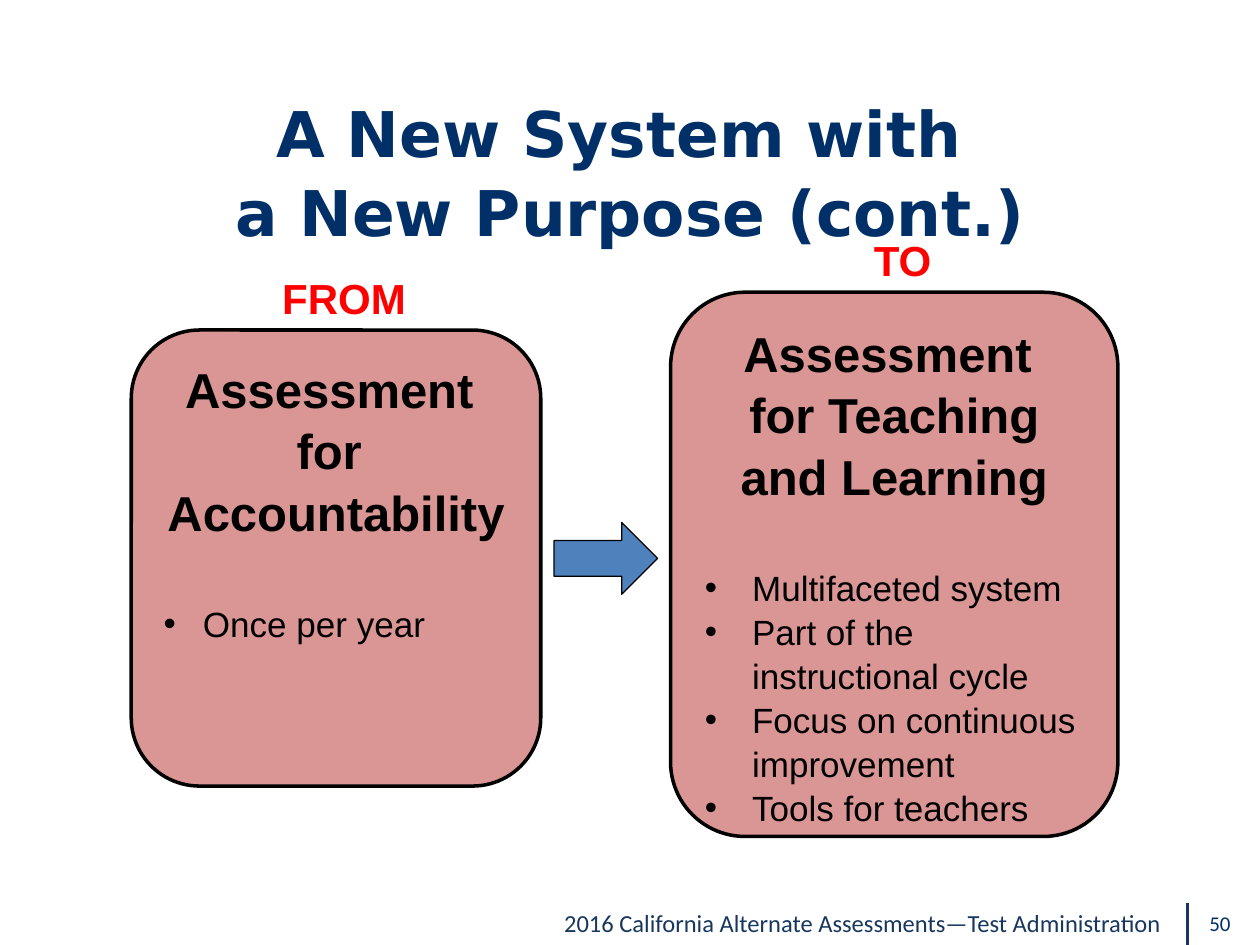
from lxml import etree
from pptx import Presentation
from pptx.dml.color import RGBColor
from pptx.enum import shapes, text
from pptx.oxml.ns import qn
from pptx.util import Pt

NAVY, DARK_BLUE, BLACK, RED = "003067", "17375E", "000000", "FF0000"
ROSE, BLUE = "D99694", "4F81BD"
LINE_SPACING = 1.05


def colour(value):
    return RGBColor.from_string(value)


def write(para, words, size, hue=BLACK, font="Arial", bold=False,
          align=text.PP_ALIGN.LEFT, spacing=1.0, before=0, indent=0):
    if indent:
        props = para._p.get_or_add_pPr()
        props.set("marL", str(Pt(indent)))
        props.set("indent", str(-Pt(indent)))
        etree.SubElement(props, qn("a:buFont")).set("typeface", "Arial")
        etree.SubElement(props, qn("a:buChar")).set("char", "•")
    para.text = words
    para.alignment = align
    para.line_spacing = spacing
    para.space_before = Pt(before)
    para.font.size = Pt(size)
    para.font.name = font
    para.font.bold = bold
    para.font.color.rgb = colour(hue)


def add_label(page, box, words, wrap=True, **style):
    label = page.shapes.add_textbox(*map(Pt, box))
    label.text_frame.word_wrap = wrap
    write(label.text_frame.paragraphs[0], words, **style)


def add_block(page, kind, box, fill, weight):
    block = page.shapes.add_shape(kind, *map(Pt, box))
    block.shadow.inherit = False
    block.fill.solid()
    block.fill.fore_color.rgb = colour(fill)
    block.line.color.rgb = colour(BLACK)
    block.line.width = Pt(weight)
    return block


def add_title(page, box, words):
    title = page.shapes.title
    title.left, title.top, title.width, title.height = map(Pt, box)
    frame = title.text_frame
    frame.auto_size = text.MSO_AUTO_SIZE.NONE
    frame.vertical_anchor = text.MSO_ANCHOR.MIDDLE
    write(frame.paragraphs[0], words, 36, NAVY, "DejaVu Sans", True,
          text.PP_ALIGN.CENTER, LINE_SPACING)


def add_panel(page, box, label, label_width, heading, points, indent):
    left, top, width, height = box
    panel = add_block(page, shapes.MSO_SHAPE.ROUNDED_RECTANGLE, box, ROSE, 2)
    frame = panel.text_frame
    frame.word_wrap = True
    frame.vertical_anchor = text.MSO_ANCHOR.TOP
    write(frame.paragraphs[0], heading, 28, bold=True,
          align=text.PP_ALIGN.CENTER, spacing=LINE_SPACING)
    for number, point in enumerate(points):
        write(frame.add_paragraph(), point, 20, spacing=LINE_SPACING,
              before=0 if number else 33.6, indent=indent)
    label_box = (left + (width - label_width) / 2 + 5, top - 36.5, label_width, 36)
    add_label(page, label_box, label, wrap=False, size=24, hue=RED, bold=True)


def add_footer(page, box, words, number):
    left, top, width, height = box
    bar_left = left + 367.5
    bar = page.shapes.add_connector(
        shapes.MSO_CONNECTOR.STRAIGHT, Pt(bar_left), Pt(top), Pt(bar_left), Pt(top + height))
    bar.line.color.rgb = colour(DARK_BLUE)
    bar.line.width = Pt(2)
    etree.SubElement(bar._element.spPr, qn("a:effectLst"))
    add_label(page, (left, top - 0.5, 367, 24.5), words, size=14, hue=DARK_BLUE,
              font="Calibri", align=text.PP_ALIGN.CENTER)
    add_label(page, (left + 373, top + 1, 36, 23), number, size=12, hue=NAVY,
              font="Calibri")


def main():
    deck = Presentation()
    deck.slide_width, deck.slide_height = Pt(720), Pt(540)
    page = deck.slides.add_slide(deck.slide_layouts.get_by_name("Title Only"))
    add_footer(page, (311, 516, 409, 24),
               "2016 California Alternate Assessments—Test Administration ", "50")
    add_title(page, (0, 72, 720, 50.4), "A New System with \va New Purpose (cont.)")
    add_panel(page, (75, 188.6, 234, 260.6), "FROM", 85.7,
              "Assessment \vfor \vAccountability", ["Once per year"], 22.5)
    add_panel(page, (383.2, 167, 255.6, 311), "TO", 47.5,
              "Assessment \vfor Teaching and Learning",
              ["Multifaceted system", "Part of the instructional cycle",
               "Focus on continuous improvement", "Tools for teachers"], 27)
    add_block(page, shapes.MSO_SHAPE.RIGHT_ARROW, (316.6, 298.6, 59.2, 41), BLUE, 0.75)
    deck.save("out.pptx")


if __name__ == "__main__":
    main()
